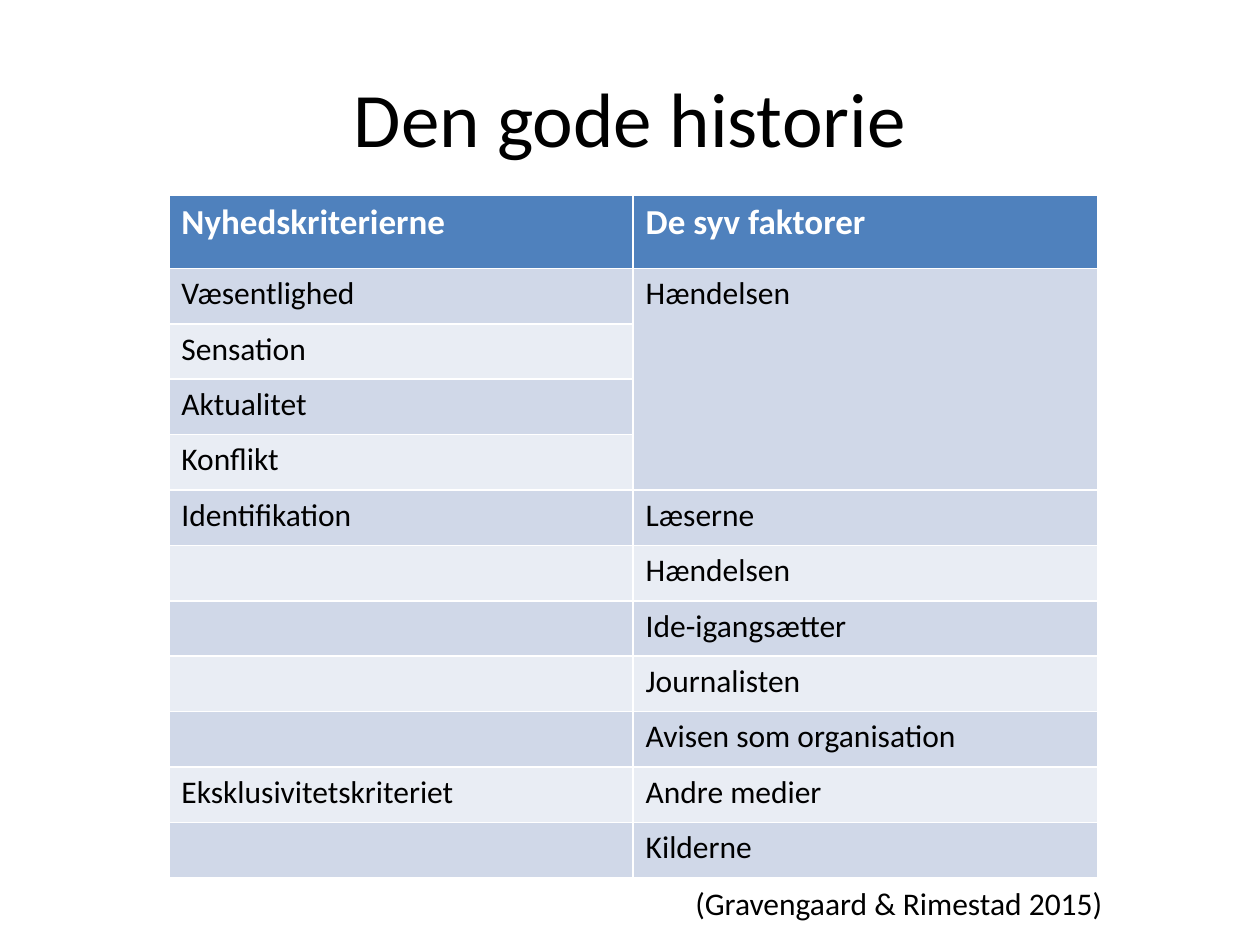
from pptx import Presentation
from pptx.dml.color import RGBColor
from pptx.enum.text import MSO_ANCHOR, PP_ALIGN
from pptx.util import Inches, Pt

CENTER = PP_ALIGN.CENTER
MIDDLE = MSO_ANCHOR.MIDDLE
BLACK = RGBColor(0x00, 0x00, 0x00)
WHITE = RGBColor(0xFF, 0xFF, 0xFF)
HEADER = RGBColor(0x4F, 0x81, 0xBD)
BANDS = (RGBColor(0xD0, 0xD8, 0xE8), RGBColor(0xE9, 0xED, 0xF4))

TITLE_FONT = {"name": "Calibri", "size": Pt(44), "bold": False}
HEADER_FONT = {"name": "Calibri", "size": Pt(20), "bold": True}
BODY_FONT = {"name": "Calibri", "size": Pt(18), "bold": False}

HEADER_HEIGHT = 0.58
MERGED_ROWS = (1, 4)
ROWS = [
    ("Nyhedskriterierne", "De syv faktorer"),
    ("Væsentlighed", "Hændelsen"),
    ("Sensation", ""),
    ("Aktualitet", ""),
    ("Konflikt", ""),
    ("Identifikation", "Læserne"),
    ("", "Hændelsen"),
    ("", "Ide-igangsætter"),
    ("", "Journalisten"),
    ("", "Avisen som organisation"),
    ("Eksklusivitetskriteriet", "Andre medier"),
    ("", "Kilderne"),
]


def write(tf, text, font, color):
    """Fill a text frame with one formatted paragraph and return it."""
    p = tf.paragraphs[0]
    target = p
    if text:
        target = p.add_run()
        target.text = text
    for name, value in font.items():
        setattr(target.font, name, value)
    target.font.color.rgb = color
    return p


def place_title(s, left, top, width, height):
    """Move and format the title placeholder."""
    sp = s.shapes.title
    sp.left, sp.top = Inches(left), Inches(top)
    sp.width, sp.height = Inches(width), Inches(height)
    sp.text_frame.vertical_anchor = MIDDLE
    write(sp.text_frame, "Den gode historie", TITLE_FONT, BLACK).alignment = CENTER


def place_table(s, left, top, width, height):
    """Add the banded table comparing criteria and factors."""
    table = s.shapes.add_table(len(ROWS), 2, Inches(left), Inches(top),
                               Inches(width), Inches(height)).table
    body_height = (height - HEADER_HEIGHT) / (len(ROWS) - 1)
    for i, texts in enumerate(ROWS):
        table.rows[i].height = Inches(body_height if i else HEADER_HEIGHT)
        font, color, fill = ((BODY_FONT, BLACK, BANDS[(i - 1) % 2]) if i
                             else (HEADER_FONT, WHITE, HEADER))
        for j, text in enumerate(texts):
            cell = table.cell(i, j)
            cell.fill.solid()
            cell.fill.fore_color.rgb = fill
            write(cell.text_frame, text, font, color)
    first, last = MERGED_ROWS
    table.cell(first, 1).merge(table.cell(last, 1))


def place_source(s, left, top, width, height):
    """Add the source reference below the table."""
    sp = s.shapes.add_textbox(Inches(left), Inches(top),
                              Inches(width), Inches(height))
    sp.text_frame.word_wrap = True
    write(sp.text_frame, "(Gravengaard & Rimestad 2015)", BODY_FONT, BLACK)


def main():
    """Build the slide and save it."""
    prs = Presentation()
    prs.slide_width, prs.slide_height = Inches(10), Inches(7.5)
    s = prs.slides.add_slide(prs.slide_layouts[5])
    place_title(s, 0.5, 0.3, 9, 1.25)
    place_table(s, 1.34, 1.55, 7.37, 5.42)
    place_source(s, 5.42, 6.97, 4.08, 0.71)
    prs.save("out.pptx")


if __name__ == "__main__":
    main()
